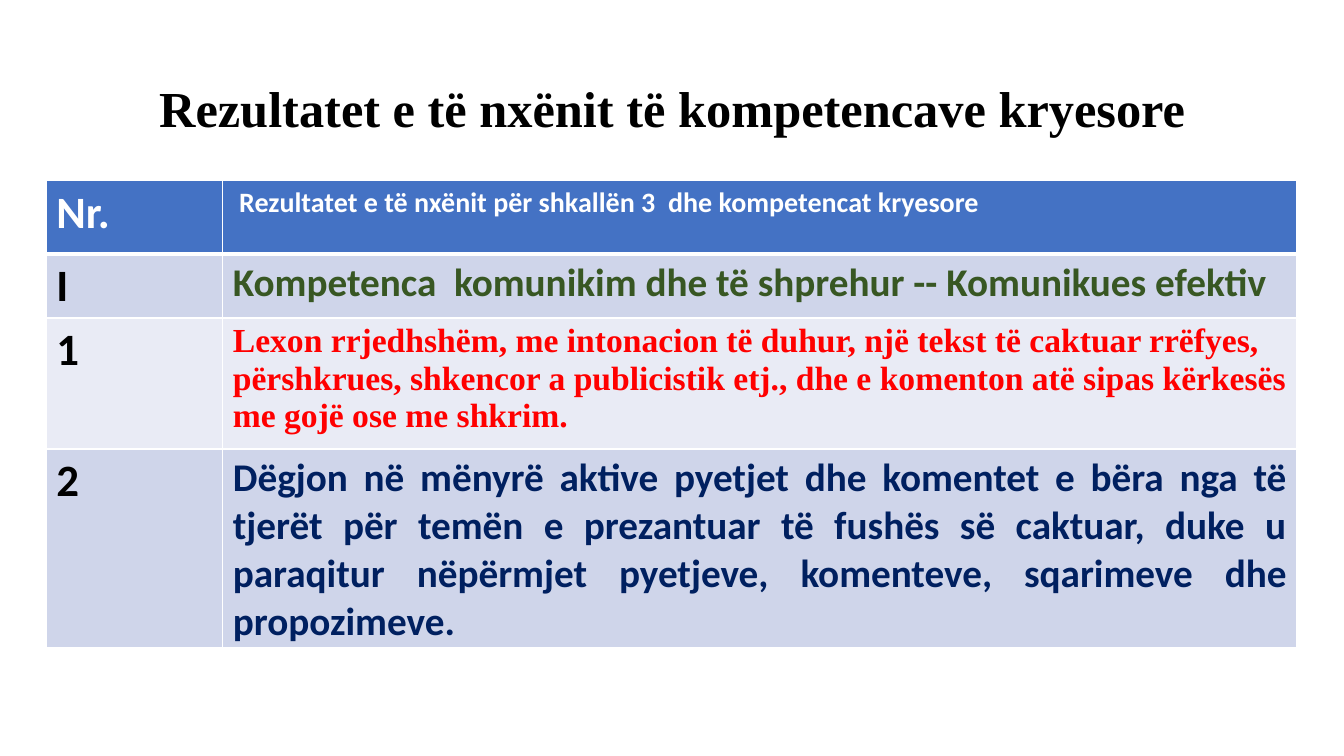
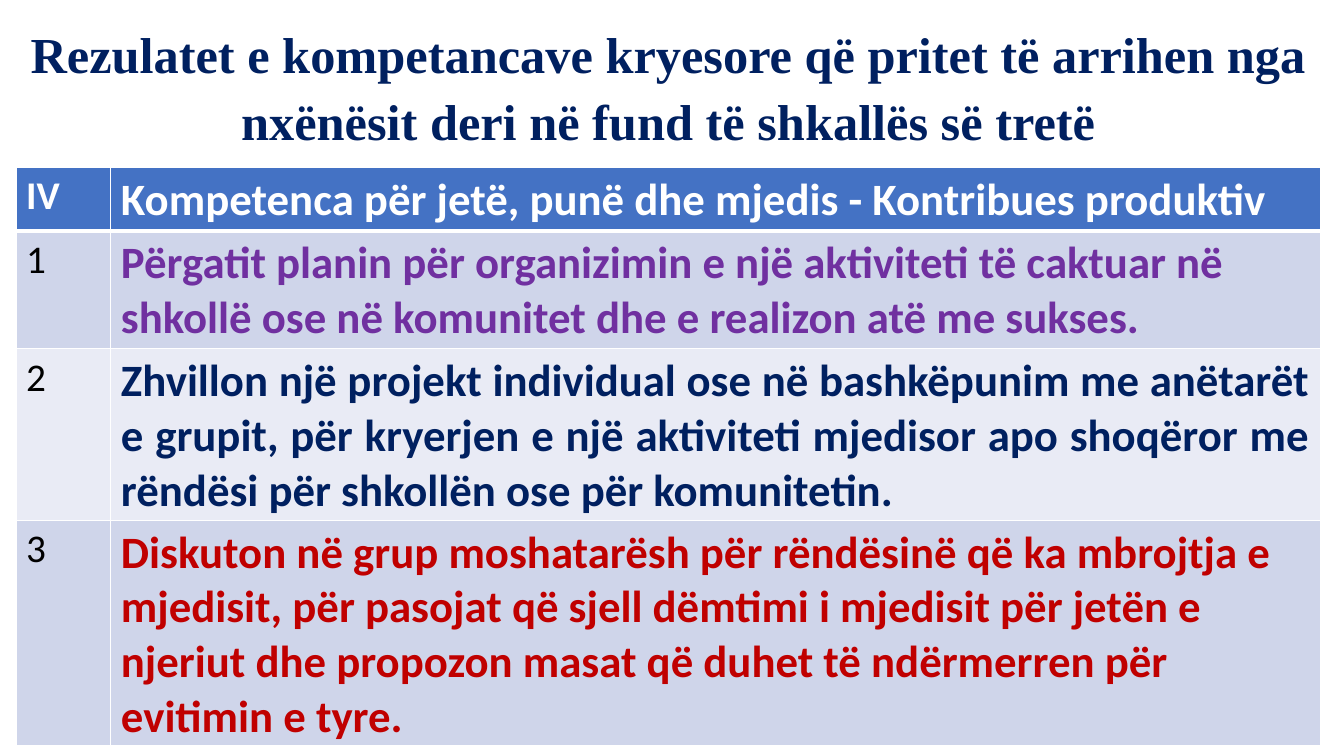
from lxml.etree import SubElement
from pptx import Presentation
from pptx.dml.color import RGBColor
from pptx.enum.text import MSO_ANCHOR, PP_ALIGN
from pptx.oxml.ns import qn
from pptx.util import Inches, Pt

COLORS = {
    "black": "000000", "white": "FFFFFF", "header": "4472C4",
    "band_dark": "CFD5EA", "band_light": "E9EBF5", "green": "385723",
    "red": "FF0000", "dark_red": "C00000", "navy": "002060", "purple": "7030A0",
}
BODY_FONT = "Calibri"
TITLE_FONT = "Times New Roman"

# Each row: height, number, text, size, colour, font, alignment
SLIDES = [
    {
        "title": "Rezultatet e të nxënit të kompetencave kryesore",
        "title_box": (0.22, 0.66, 12.9, 1.31), "title_color": "black",
        "table_at": (0.46, 1.79), "columns": (1.75, 10.65),
        "number_size": 32, "number_bold": True,
        "rows": [
            (0.73, "Nr.", " Rezultatet e të nxënit për shkallën 3  dhe kompetencat kryesore",
             20, "white", BODY_FONT, PP_ALIGN.LEFT),
            (0.63, "I", "Kompetenca  komunikim dhe të shprehur -- Komunikues efektiv",
             28, "green", BODY_FONT, PP_ALIGN.LEFT),
            (1.3, "1", "Lexon rrjedhshëm, me intonacion të duhur, një tekst të caktuar rrëfyes, "
             "përshkrues, shkencor a publicistik etj., dhe e komenton atë sipas kërkesës "
             "me gojë ose me shkrim.", 24, "red", TITLE_FONT, PP_ALIGN.LEFT),
            (1.97, "2", "Dëgjon në mënyrë aktive pyetjet dhe komentet e bëra nga të tjerët për "
             "temën e prezantuar të fushës së caktuar, duke u paraqitur nëpërmjet pyetjeve, "
             "komenteve, sqarimeve dhe propozimeve.", 28, "navy", BODY_FONT, PP_ALIGN.JUSTIFY),
        ],
    },
    {
        "title": "Rezulatet e kompetancave kryesore që pritet të arrihen nga "
                 "nxënësit deri në fund të shkallës së tretë",
        "title_box": (0.16, 0.12, 12.94, 1.31), "title_color": "navy",
        "table_at": (0.16, 1.66), "columns": (0.94, 12),
        "number_size": 28, "number_bold": False,
        "rows": [
            (0.63, "IV", "Kompetenca për jetë, punë dhe mjedis - Kontribues produktiv",
             32, "white", BODY_FONT, PP_ALIGN.LEFT),
            (1.16, "1", "Përgatit planin për organizimin e një aktiviteti të caktuar në shkollë "
             "ose në komunitet dhe e realizon atë me sukses.",
             32, "purple", BODY_FONT, PP_ALIGN.LEFT),
            (1.7, "2", "Zhvillon një projekt individual ose në bashkëpunim me anëtarët e grupit, "
             "për kryerjen e një aktiviteti mjedisor apo shoqëror me rëndësi për shkollën "
             "ose për komunitetin.", 32, "navy", BODY_FONT, PP_ALIGN.JUSTIFY),
            (2.24, "3", "Diskuton në grup moshatarësh për rëndësinë që ka mbrojtja e mjedisit, "
             "për pasojat që sjell dëmtimi i mjedisit për jetën e njeriut dhe propozon masat "
             "që duhet të ndërmerren për evitimin e tyre.",
             32, "dark_red", BODY_FONT, PP_ALIGN.LEFT),
        ],
    },
]


def write_text(text_frame, text, size, color, font_name, alignment, bold=True):
    text_frame.text = text
    paragraph = text_frame.paragraphs[0]
    paragraph.alignment = alignment
    font = paragraph.runs[0].font
    font.name, font.size, font.bold = font_name, Pt(size), bold
    font.color.rgb = RGBColor.from_string(COLORS[color])
    return paragraph


def style_cell(cell, row_index):
    """Add white borders, heavier below the header, and the band fill."""
    properties = cell._tc.get_or_add_tcPr()
    widths = {"a:lnL": 1, "a:lnR": 1,
              "a:lnT": 3 if row_index == 1 else 1,
              "a:lnB": 3 if row_index == 0 else 1}
    for tag, width in widths.items():
        line = SubElement(properties, qn(tag), w=str(Pt(width)))
        fill = SubElement(line, qn("a:solidFill"))
        SubElement(fill, qn("a:srgbClr"), val=COLORS["white"])
    band = "header" if row_index == 0 else ("band_light", "band_dark")[row_index % 2]
    cell.fill.solid()
    cell.fill.fore_color.rgb = RGBColor.from_string(COLORS[band])


presentation = Presentation()
presentation.slide_width = Inches(13.33)
presentation.slide_height = Inches(7.5)

for content in SLIDES:
    slide = presentation.slides.add_slide(presentation.slide_layouts[6])

    title = slide.shapes.add_textbox(*(Inches(value) for value in content["title_box"]))
    title.text_frame.word_wrap = True
    title.text_frame.vertical_anchor = MSO_ANCHOR.TOP
    paragraph = write_text(title.text_frame, content["title"], 36,
                           content["title_color"], TITLE_FONT, PP_ALIGN.CENTER)
    paragraph.line_spacing = 1.1

    rows, columns = content["rows"], content["columns"]
    left, top = content["table_at"]
    table = slide.shapes.add_table(
        len(rows), len(columns), Inches(left), Inches(top),
        Inches(sum(columns)), Inches(sum(row[0] for row in rows))).table
    for column, width in zip(table.columns, columns):
        column.width = Inches(width)

    for row_index, (height, number, text, size, color, font_name, alignment) in enumerate(rows):
        table.rows[row_index].height = Inches(height)
        number_cell, text_cell = table.cell(row_index, 0), table.cell(row_index, 1)
        is_header = row_index == 0
        write_text(number_cell.text_frame, number, content["number_size"],
                   "white" if is_header else "black", BODY_FONT, PP_ALIGN.LEFT,
                   is_header or content["number_bold"])
        write_text(text_cell.text_frame, text, size, color, font_name, alignment)
        for cell in (number_cell, text_cell):
            style_cell(cell, row_index)

presentation.save("out.pptx")
